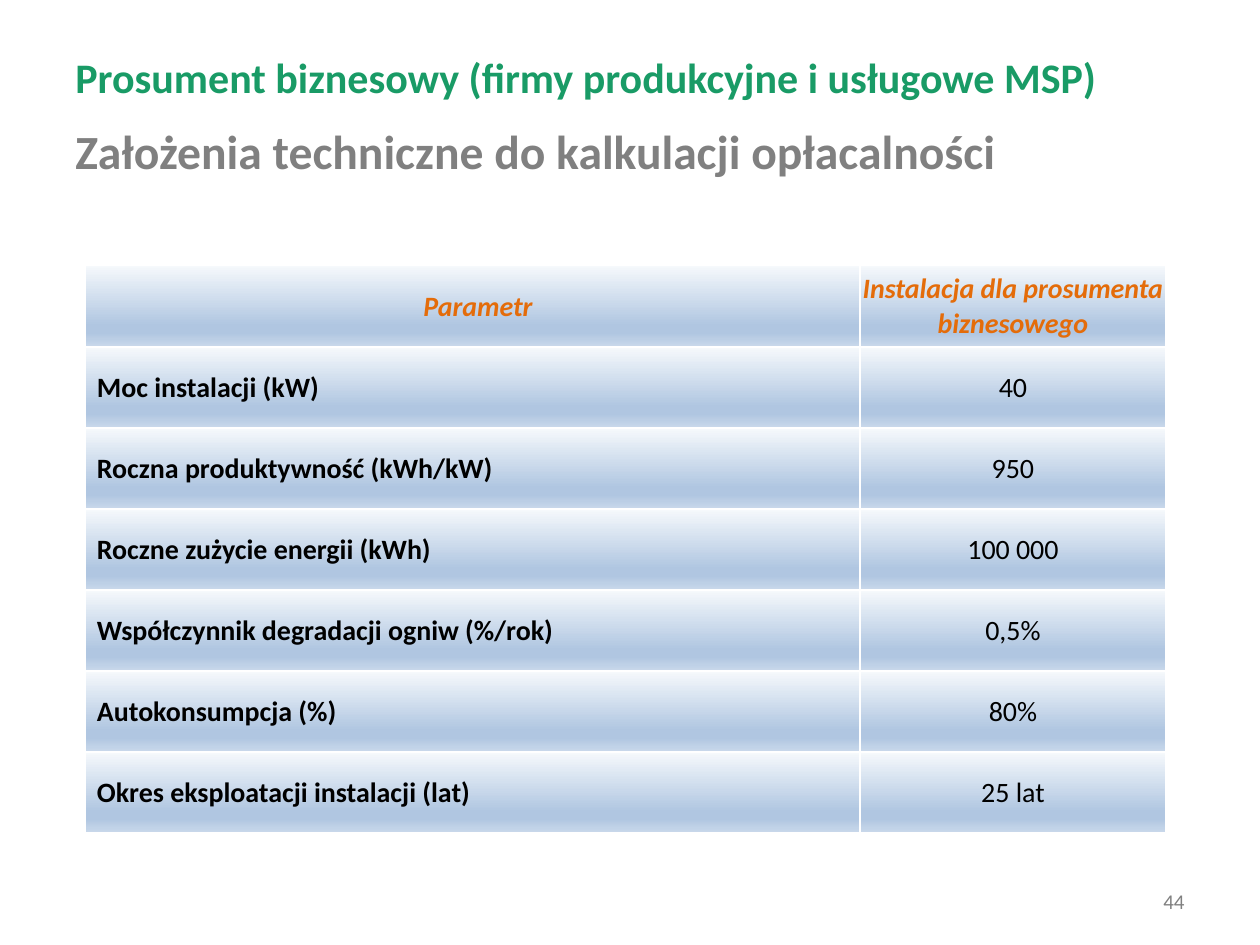
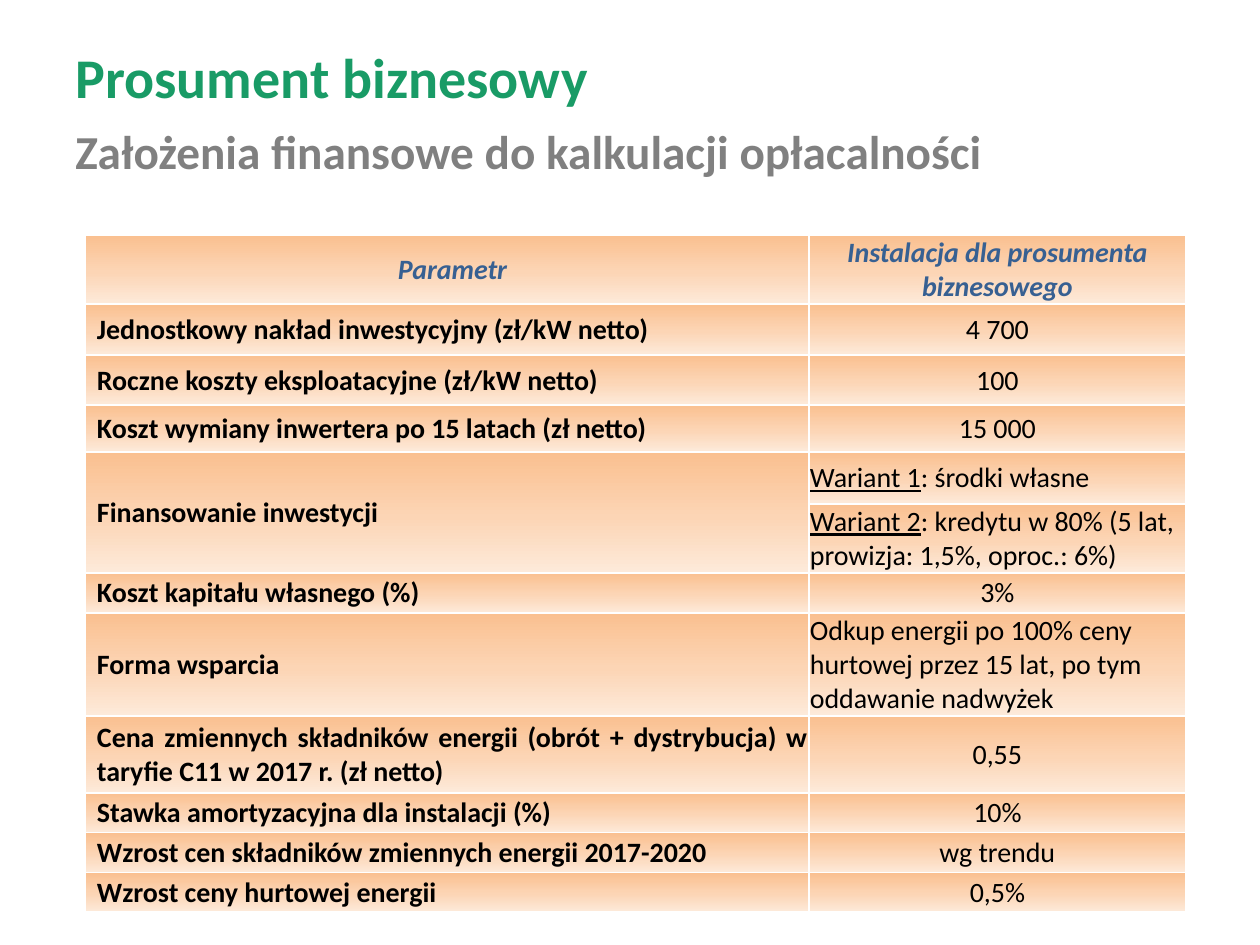
import pptx
import pptx.util
import pptx.oxml
import pptx.oxml.ns
import pptx.dml.color
import pptx.enum.text
import lxml.etree

RGB = pptx.dml.color.RGBColor
ALIGN = pptx.enum.text.PP_ALIGN
ANCHOR = pptx.enum.text.MSO_ANCHOR

FONT = "Calibri"
GREEN = RGB(0x19, 0x9B, 0x66)
GRAY = RGB(0x80, 0x80, 0x80)
ORANGE = RGB(0xE4, 0x6C, 0x0A)
NAVY = RGB(0x37, 0x60, 0x92)
BLACK = RGB(0, 0, 0)
WHITE = RGB(0xFF, 0xFF, 0xFF)
BLUES = [(0, RGB(0xF6, 0xF9, 0xFC)), (74, RGB(0xB0, 0xC6, 0xE1)),
         (83, RGB(0xB0, 0xC6, 0xE1)), (100, RGB(0xCA, 0xD9, 0xEB))]
PEACH = [(0, RGB(0xFA, 0xC0, 0x90)), (54, RGB(0xFC, 0xD5, 0xB5)),
         (100, RGB(0xFD, 0xEA, 0xDA))]

HEAD = ("Parametr", "Instalacja dla prosumenta biznesowego")
TECH = [
    ("Moc instalacji (kW)", "40"),
    ("Roczna produktywność (kWh/kW)", "950"),
    ("Roczne zużycie energii (kWh)", "100 000"),
    ("Współczynnik degradacji ogniw (%/rok)", "0,5%"),
    ("Autokonsumpcja (%)", "80%"),
    ("Okres eksploatacji instalacji (lat)", "25 lat"),
]
COSTS = [
    ("Jednostkowy nakład inwestycyjny (zł/kW netto)", "4 700"),
    ("Roczne koszty eksploatacyjne (zł/kW netto)", "100"),
    ("Koszt wymiany inwertera po 15 latach (zł netto)", "15 000"),
    ("Finansowanie inwestycji", ("Wariant 1", ": środki własne")),
    (None, ("Wariant 2", ": kredytu w 80% (5 lat, prowizja: 1,5%, oproc.: 6%)")),
    ("Koszt kapitału własnego (%)", "3%"),
    ("Forma wsparcia",
     ("", "Odkup energii po 100% ceny hurtowej przez 15 lat, po tym oddawanie nadwyżek")),
    ("Cena zmiennych składników energii (obrót + dystrybucja) w taryfie C11 "
     "w 2017 r. (zł netto)", "0,55"),
    ("Stawka amortyzacyjna dla instalacji (%)", "10%"),
    ("Wzrost cen składników zmiennych energii 2017-2020", "wg trendu"),
    ("Wzrost ceny hurtowej energii", "0,5%"),
]


def px(size):
    return pptx.util.Emu(round(size * 914400 / 126))


def style(para, size, color, bold=False, italic=False):
    for run in para.runs:
        font = run.font
        font.name = FONT
        font.size = pptx.util.Pt(size)
        font.bold = bold
        font.italic = italic
        font.color.rgb = color


def label(slide, box, text, size, color, bold=True, align=ALIGN.LEFT, anchor=ANCHOR.MIDDLE):
    frame = slide.shapes.add_textbox(*map(px, box)).text_frame
    frame.word_wrap = True
    frame.vertical_anchor = anchor
    frame.text = text
    para = frame.paragraphs[0]
    para.alignment = align
    style(para, size, color, bold)


def header(slide, box, title, size, topic, small):
    left, top, width, high = box
    label(slide, (left, top, width, 77), title, size, GREEN)
    label(slide, (left, top + 78, width, high - 78), topic, small, GRAY, anchor=ANCHOR.TOP)


def footer(slide, box, number):
    label(slide, box, number, 12, GRAY, False, ALIGN.RIGHT)


def add_color(parent, color):
    fill = lxml.etree.SubElement(parent, pptx.oxml.ns.qn("a:solidFill"))
    lxml.etree.SubElement(fill, pptx.oxml.ns.qn("a:srgbClr"), val=str(color))


def paint(cell, stops):
    qn = pptx.oxml.ns.qn
    props = cell._tc.get_or_add_tcPr()
    for side in "LRTB":
        add_color(lxml.etree.SubElement(props, qn("a:ln" + side), w="12700"), WHITE)
    grad = lxml.etree.SubElement(props, qn("a:gradFill"), rotWithShape="1")
    items = lxml.etree.SubElement(grad, qn("a:gsLst"))
    for place, color in stops:
        stop = lxml.etree.SubElement(items, qn("a:gs"), pos=str(place * 1000))
        lxml.etree.SubElement(stop, qn("a:srgbClr"), val=str(color))
    lxml.etree.SubElement(grad, qn("a:lin"), ang="5400000", scaled="0")


def write(cell, value, color, bold, italic, align):
    para = cell.text_frame.paragraphs[0]
    if isinstance(value, tuple):
        lead, rest = value
        para.text = lead
        for run in para.runs:
            run.font.underline = True
        para.add_run().text = rest
        align = ALIGN.LEFT
    else:
        para.text = value
    para.alignment = align
    style(para, 16, color, bold, italic)
    return para


def grid(slide, box, split, heights, rows, stops, accent):
    left, top, width = box
    table = slide.shapes.add_table(
        len(heights), 2, px(left), px(top), px(width), px(sum(heights))).table
    table.first_row = False
    table.horz_banding = False
    table.columns[0].width = px(split)
    table.columns[1].width = px(width - split)
    for line, (high, pair) in enumerate(zip(heights, [HEAD] + rows)):
        table.rows[line].height = px(high)
        top_row = line == 0
        color = accent if top_row else BLACK
        for col, value in enumerate(pair):
            cell = table.cell(line, col)
            cell.margin_left = cell.margin_right = cell.margin_top = px(1)
            cell.margin_bottom = 0
            cell.vertical_anchor = ANCHOR.MIDDLE
            paint(cell, stops)
            if value is None:
                table.cell(line - 1, col).merge(cell)
                continue
            first = col == 0
            align = ALIGN.JUSTIFY if first and not top_row else ALIGN.CENTER
            para = write(cell, value, color, first or top_row, top_row, align)
            if first:
                para._p.get_or_add_pPr().set("marL", str(px(11)))


def main():
    deck = pptx.Presentation()
    deck.slide_width, deck.slide_height = px(1260), px(945)
    blank = deck.slide_layouts[6]
    top_box = (63, 38, 1063, 137)

    slide = deck.slides.add_slide(blank)
    footer(slide, (903, 876, 294, 50), "44")
    header(slide, top_box, "Prosument biznesowy (firmy produkcyjne i usługowe MSP)", 24,
           "Założenia techniczne do kalkulacji opłacalności", 27.2)
    grid(slide, (85, 265, 1081), 775, [82] + [81] * 6, TECH, BLUES, ORANGE)

    slide = deck.slides.add_slide(blank)
    header(slide, top_box, "Prosument biznesowy", 32,
           "Założenia finansowe do kalkulacji opłacalności", 27)
    grid(slide, (85, 235, 1101), 724,
         [69, 51, 50, 47, 52, 69, 40, 103, 77, 40, 40, 39], COSTS, PEACH, NAVY)
    deck.save("out.pptx")


if __name__ == "__main__":
    main()
